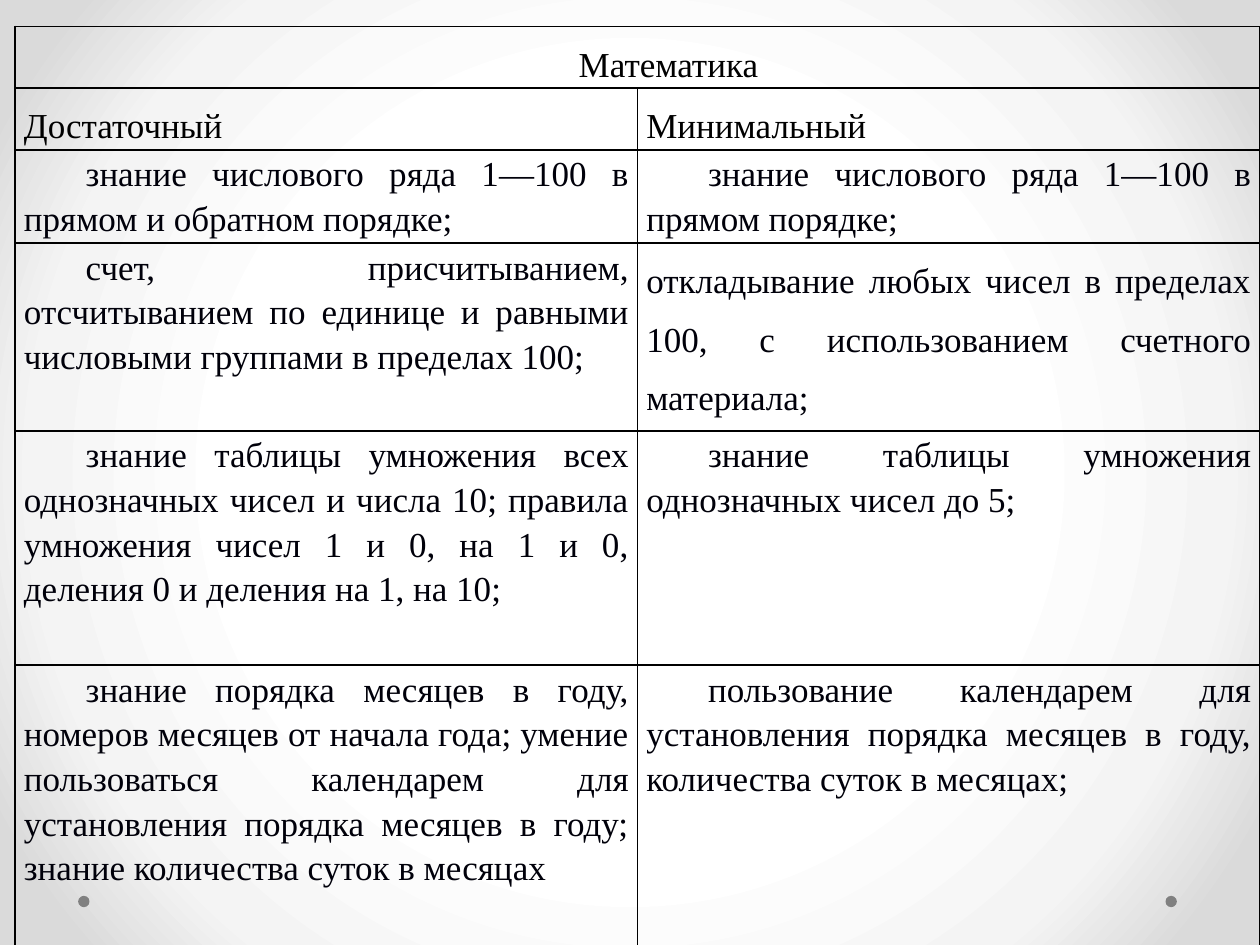
from dataclasses import dataclass

from lxml import etree
from pptx import Presentation
from pptx import util as u
from pptx.dml.color import RGBColor
from pptx.enum import shapes, text
from pptx.oxml import parse_xml
from pptx.oxml.ns import nsdecls, qn


@dataclass(frozen=True)
class Theme:
    font: str = "Times New Roman"
    size: int = 20
    heading: str = "000000"
    body: str = "00000A"
    border: str = "000000"
    border_width: int = 1
    dot: str = "808080"
    backdrop: tuple = ((50, "FFFFFF"), (76, "F4F4F4"), (92, "DADADA"))


THEME = Theme()

# Paragraph formats
PLAIN = {"alignment": text.PP_ALIGN.JUSTIFY, "line_spacing": 1.5}
INDENTED = {"alignment": text.PP_ALIGN.JUSTIFY, "line_spacing": 1.15}
TITLE = {"alignment": text.PP_ALIGN.CENTER, "line_spacing": 1.5}
FIRST_LINE = u.Inches(0.49)

MARGINS = {"margin_left": u.Inches(0.07), "margin_right": u.Inches(0.07),
           "margin_top": 0, "margin_bottom": 0}

# Row height, then the text and format of each cell
ROWS = [
    (0.49, [("Математика", TITLE)]),
    (0.49, [("Достаточный", PLAIN), ("Минимальный", PLAIN)]),
    (0.74, [("знание числового ряда 1—100 в прямом и обратном порядке; ", INDENTED),
            ("знание числового ряда 1—100 в прямом порядке; ", INDENTED)]),
    (1.49, [("счет, присчитыванием, отсчитыванием по единице и равными "
             "числовыми группами в пределах 100;", INDENTED),
            ("откладывание любых чисел в пределах 100, с использованием "
             "счетного материала;", PLAIN)]),
    (1.86, [("знание таблицы умножения всех однозначных чисел и числа 10; "
             "правила умножения чисел 1 и 0, на 1 и 0, деления 0 и деления "
             "на 1, на 10;", INDENTED),
            ("знание таблицы умножения однозначных чисел до 5;", INDENTED)]),
    (2.23, [("знание порядка месяцев в году, номеров месяцев от начала года; "
             "умение пользоваться календарем для установления порядка месяцев "
             "в году; знание количества суток в месяцах", INDENTED),
            ("пользование календарем для установления порядка месяцев в году, "
             "количества суток в месяцах;", INDENTED)]),
]
HEADING_ROWS = 2


def apply(obj, values):
    for name, value in values.items():
        setattr(obj, name, value)


def set_background(s):
    """Radial gradient, lightest in the middle."""
    s.background.fill.gradient()
    grad = s.element.find(".//" + qn("a:gradFill"))
    for child in list(grad):
        grad.remove(child)
    stops = etree.SubElement(grad, qn("a:gsLst"))
    for pos, color in THEME.backdrop:
        gs = etree.SubElement(stops, qn("a:gs"), pos=str(pos * 1000))
        etree.SubElement(gs, qn("a:srgbClr"), val=color)
    way = etree.SubElement(grad, qn("a:path"), path="circle")
    etree.SubElement(way, qn("a:fillToRect"),
                     {side: "50000" for side in "ltrb"})


def add_dot(s, left):
    size = u.Inches(0.09)
    sp = s.shapes.add_shape(shapes.MSO_SHAPE.OVAL, u.Inches(left),
                            u.Inches(7.11), size, size)
    sp.shadow.inherit = False
    sp.fill.solid()
    sp.fill.fore_color.rgb = RGBColor.from_string(THEME.dot)
    sp.line.fill.background()


def set_borders(cell):
    tc_pr = cell._tc.get_or_add_tcPr()
    for i, side in enumerate("LRTB"):
        tc_pr.insert(i, parse_xml(
            f'<a:ln{side} {nsdecls("a")} w="{u.Pt(THEME.border_width)}">'
            f'<a:solidFill><a:srgbClr val="{THEME.border}"/></a:solidFill>'
            f'</a:ln{side}>'))


def write_cell(cell, words, fmt, color):
    apply(cell, MARGINS)
    p = cell.text_frame.paragraphs[0]
    apply(p, fmt)
    if fmt is not PLAIN:
        p._p.get_or_add_pPr().set("indent", str(FIRST_LINE))
    r = p.add_run()
    r.text = words
    apply(r.font, {"name": THEME.font, "size": u.Pt(THEME.size)})
    r.font.color.rgb = RGBColor.from_string(color)


def add_table(s):
    heights = [height for height, _ in ROWS]
    table = s.shapes.add_table(len(ROWS), 2, u.Inches(0.12), u.Inches(0.21),
                               u.Inches(9.88), u.Inches(sum(heights))).table
    apply(table, {"first_row": False, "horz_banding": False})
    for col in table.columns:
        col.width = u.Inches(4.94)
    for cell in table.iter_cells():
        cell.fill.background()
        set_borders(cell)
    table.cell(0, 0).merge(table.cell(0, 1))
    for i, (height, cells) in enumerate(ROWS):
        table.rows[i].height = u.Inches(height)
        color = THEME.heading if i < HEADING_ROWS else THEME.body
        for j, (words, fmt) in enumerate(cells):
            write_cell(table.cell(i, j), words, fmt, color)


def main():
    prs = Presentation()
    prs.slide_width, prs.slide_height = u.Inches(10), u.Inches(7.5)
    s = prs.slides.add_slide(prs.slide_layouts[6])
    set_background(s)
    # Decorative dots lie behind the table
    for left in (9.25, 0.62):
        add_dot(s, left)
    add_table(s)
    prs.save("out.pptx")


if __name__ == "__main__":
    main()
